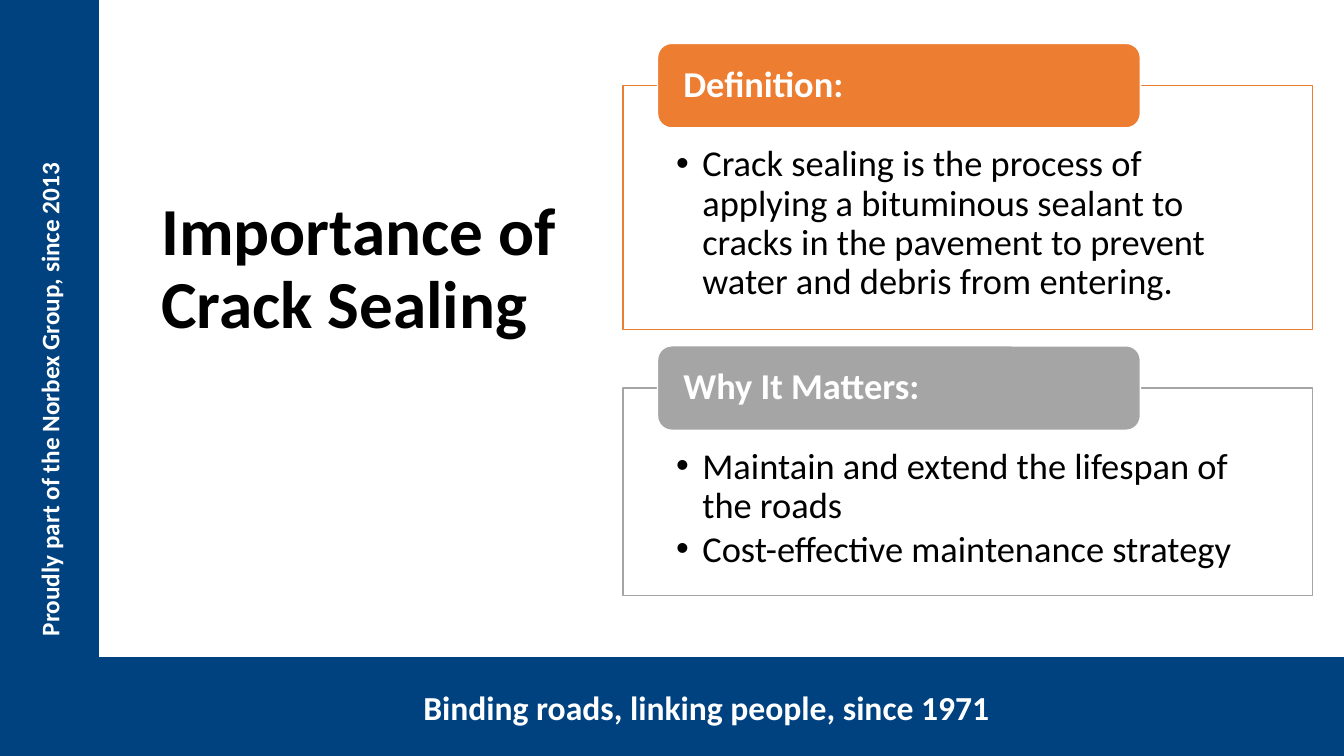
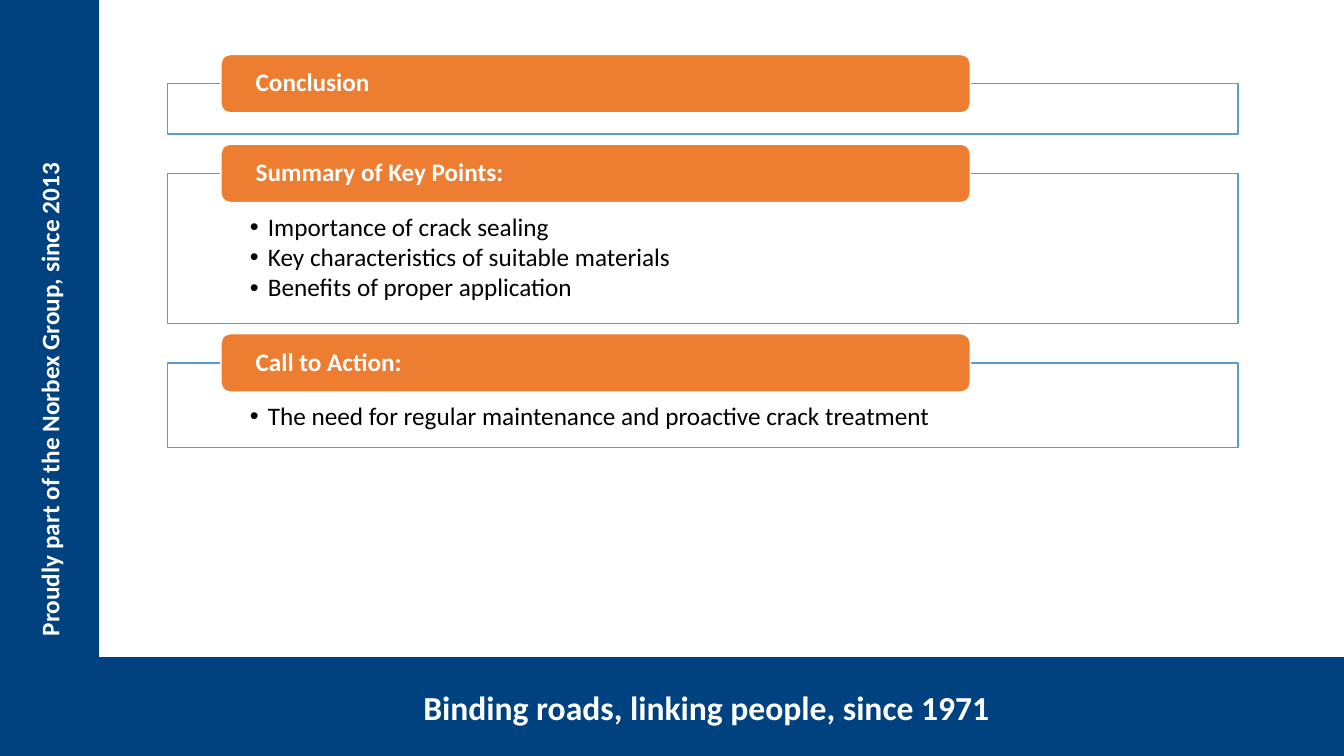
from pptx import Presentation
from pptx.dml.color import RGBColor
from pptx.enum.shapes import MSO_SHAPE
from pptx.enum.text import MSO_ANCHOR, PP_ALIGN
from pptx.oxml.ns import qn
from pptx.util import Inches, Pt
from lxml.etree import SubElement

FONT = "Calibri"
NAVY, ORANGE, GREY, BLUE = "00427F", "ED7D31", "A5A5A5", "5B9BD5"
WHITE, BLACK = "FFFFFF", "000000"
WIDE, HIGH, BAND = 13.33, 7.5, 0.98


def tint(code):
    return RGBColor.from_string(code)


def block(slide, kind, left, top, width, height, fill, line=None):
    shape = slide.shapes.add_shape(
        kind, Inches(left), Inches(top), Inches(width), Inches(height))
    shape.shadow.inherit = False
    shape.fill.solid()
    shape.fill.fore_color.rgb = tint(fill)
    if line:
        shape.line.color.rgb = tint(line)
        shape.line.width = Pt(1)
    else:
        shape.line.fill.background()
    return shape


def style(para, size, color, bold=False):
    para.alignment = PP_ALIGN.LEFT
    for run in para.runs:
        run.font.name = FONT
        run.font.size = Pt(size)
        run.font.bold = bold
        run.font.color.rgb = tint(color)


def label(slide, text, left, top, width, height, size, color, turn=0):
    box = slide.shapes.add_textbox(
        Inches(left), Inches(top), Inches(width), Inches(height))
    box.rotation = turn
    box.text_frame.word_wrap = True
    box.text_frame.text = text
    style(box.text_frame.paragraphs[0], size, color, True)
    return box


def inset(frame, side, top=0):
    frame.word_wrap = True
    frame.margin_left = frame.margin_right = Inches(side)
    frame.margin_top = Inches(top)
    frame.margin_bottom = 0


def bullet(para, indent):
    props = para._p.get_or_add_pPr()
    props.set("marL", str(Inches(indent)))
    props.set("indent", str(-Inches(indent)))
    SubElement(props, qn("a:buFont")).set("typeface", "Arial")
    SubElement(props, qn("a:buChar")).set("char", "•")


def panel(slide, left, top, width, height, size, head, points, fill, line):
    em = size / 72
    side = 0.077 * width
    shift = 0.05 * width
    body = block(slide, MSO_SHAPE.RECTANGLE, left, top, width, height,
                 WHITE, line)
    frame = body.text_frame
    inset(frame, side, 1.64 * em)
    frame.vertical_anchor = MSO_ANCHOR.TOP
    if points:
        frame.text = "\n".join(points)
        for para in frame.paragraphs:
            bullet(para, 0.72 * em)
            para.line_spacing = 0.9
            para.space_after = Pt(0.12 * size)
            style(para, size, BLACK)

    tall = 2.32 * em
    tab = block(slide, MSO_SHAPE.ROUNDED_RECTANGLE, left + shift,
                top - tall / 2, 0.7 * width, tall, fill, WHITE)
    frame = tab.text_frame
    inset(frame, side - shift + 0.03)
    frame.vertical_anchor = MSO_ANCHOR.MIDDLE
    frame.text = head
    frame.paragraphs[0].line_spacing = 0.9
    style(frame.paragraphs[0], size, WHITE, True)


def stack(slide, left, top, width, gap, size, items):
    for height, head, points, fill, line in items:
        panel(slide, left, top, width, height, size, head, points, fill, line)
        top += height + gap


def title(slide, text):
    box = label(slide, text, 1.5, 0, 4.59, 5.36, 48, BLACK)
    box.text_frame.vertical_anchor = MSO_ANCHOR.MIDDLE
    box.text_frame.paragraphs[0].line_spacing = 0.9


def page(deck):
    slide = deck.slides.add_slide(deck.slide_layouts[6])
    block(slide, MSO_SHAPE.RECTANGLE, 0, 0, BAND, HIGH, NAVY)
    block(slide, MSO_SHAPE.RECTANGLE, BAND, HIGH - BAND, WIDE - BAND, BAND,
          NAVY)
    label(slide, "Binding roads, linking people, since 1971",
          4.1, 6.77, 7.22, 0.5, 24, WHITE)
    label(slide, "Proudly part of the Norbex Group, since 2013",
          -1.98, 3.74, 4.94, 0.4, 18, WHITE, 270)
    return slide


def main():
    deck = Presentation()
    deck.slide_width = Inches(WIDE)
    deck.slide_height = Inches(HIGH)

    slide = page(deck)
    title(slide, "Importance of Crack Sealing")
    stack(slide, 6.18, 0.85, 6.84, 0.58, 26, [
        (2.42, "Definition:",
         ["Crack sealing is the process of applying a bituminous sealant to "
          "cracks in the pavement to prevent water and debris from entering."],
         ORANGE, ORANGE),
        (2.06, "Why It Matters:",
         ["Maintain and extend the lifespan of the roads",
          "Cost-effective maintenance strategy"],
         GREY, GREY),
    ])

    slide = page(deck)
    stack(slide, 1.66, 0.83, 10.62, 0.39, 18, [
        (0.5, "Conclusion", [], ORANGE, BLUE),
        (1.49, "Summary of Key Points:",
         ["Importance of crack sealing",
          "Key characteristics of suitable materials",
          "Benefits of proper application"],
         ORANGE, BLUE),
        (0.84, "Call to Action:",
         ["The need for regular maintenance and proactive crack treatment"],
         ORANGE, BLUE),
    ])

    deck.save("out.pptx")


if __name__ == "__main__":
    main()
